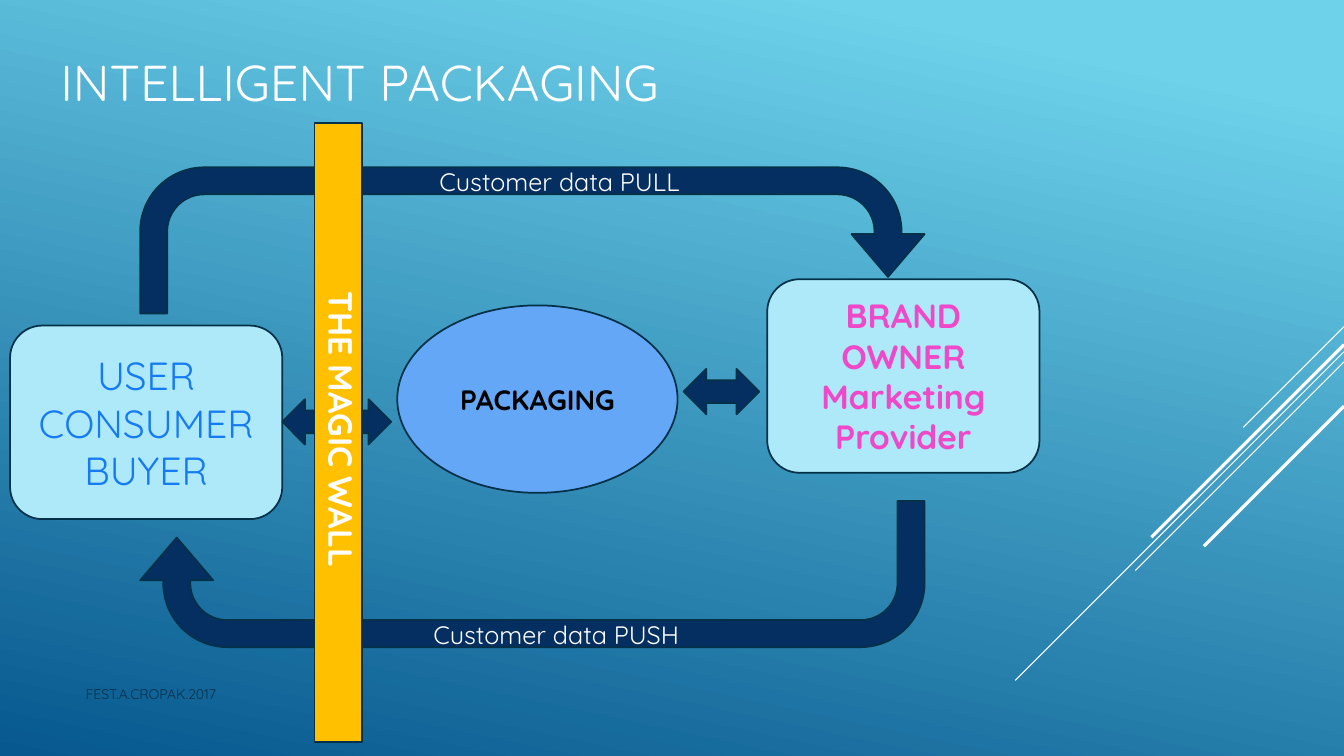
from lxml import etree
from pptx import Presentation
from pptx.dml.color import RGBColor
from pptx.enum.shapes import MSO_CONNECTOR, MSO_SHAPE
from pptx.enum.text import MSO_ANCHOR, MSO_AUTO_SIZE, PP_ALIGN
from pptx.oxml.ns import qn
from pptx.util import Inches, Pt

STRAIGHT = MSO_CONNECTOR.STRAIGHT
RECTANGLE, ROUNDED, OVAL = MSO_SHAPE.RECTANGLE, MSO_SHAPE.ROUNDED_RECTANGLE, MSO_SHAPE.OVAL
U_TURN, DOUBLE_ARROW = MSO_SHAPE.U_TURN_ARROW, MSO_SHAPE.LEFT_RIGHT_ARROW
TOP, MIDDLE = MSO_ANCHOR.TOP, MSO_ANCHOR.MIDDLE
GROW, CENTER = MSO_AUTO_SIZE.SHAPE_TO_FIT_TEXT, PP_ALIGN.CENTER

WHITE, NAVY, OUTLINE, PALE = "FFFFFF", "052F61", "043148", "ADE9F8"


def color(hex_string):
    return RGBColor.from_string(hex_string)


def write(shape, lines, font_color, size, bold=False, align=None):
    """Fill a shape with one paragraph per line."""
    frame = shape.text_frame
    for index, line in enumerate(lines):
        para = frame.paragraphs[0] if index == 0 else frame.add_paragraph()
        para.alignment = align
        span = para.add_run()
        span.text = line
        font_format = {"name": "Quicksand", "size": Pt(size), "bold": bold}
        for name, value in font_format.items():
            setattr(span.font, name, value)
        span.font.color.rgb = color(font_color)


deck = Presentation()
deck.slide_width, deck.slide_height = Inches(13.33), Inches(7.5)
page = deck.slides.add_slide(deck.slide_layouts[6])

# Background gradient
background = page.background.fill
background.gradient()
background.gradient_angle = 258
for stop, (position, shade) in zip(background.gradient_stops, [(0.1, "6ED2EB"), (1, "06588E")]):
    stop.position = position
    stop.color.rgb = color(shade)

# Diagonal lines running in from the right edge at 45 degrees: top, length, weight
for top, reach, weight in [(3.24, 1, 0.75), (3.49, 3.26, 0.75), (3.59, 2.07, 0.75),
                           (3.42, 1.91, 2.25), (4.03, 1.39, 2.25)]:
    line = page.shapes.add_connector(STRAIGHT, Inches(13.33), Inches(top),
                                     Inches(13.33 - reach), Inches(top + reach))
    line.line.color.rgb = color(WHITE)
    line.line.width = Pt(weight)
    etree.SubElement(line._element.spPr, qn("a:effectLst"))

# Diagram shapes, back to front: kind, place, fill, rotation, text arguments
shapes = [
    (U_TURN, (1.39, 1.66, 7.78, 1.45), NAVY, 0, None),
    (U_TURN, (1.39, 4.97, 7.78, 1.45), NAVY, 180, None),
    (ROUNDED, (0.1, 3.23, 2.7, 1.92), PALE, 0,
     (["USER", "CONSUMER", "BUYER"], "167BF3", 28)),
    (ROUNDED, (7.61, 2.77, 2.7, 1.92), PALE, 0,
     (["BRAND OWNER", "Marketing Provider"], "EF48C9", 24, True)),
    (OVAL, (3.94, 3.03, 2.78, 1.86), "64A7F7", 0, (["PACKAGING"], "000000", 20, True)),
    (DOUBLE_ARROW, (2.8, 3.96, 1.08, 0.45), NAVY, 0, None),
    (DOUBLE_ARROW, (6.78, 3.66, 0.75, 0.45), NAVY, 0, None),
    (RECTANGLE, (3.12, 1.22, 0.47, 6.14), "FFC000", 0, None),
]
for kind, place, fill, rotation, text in shapes:
    shape = page.shapes.add_shape(kind, *map(Inches, place))
    shape.shadow.inherit = False
    shape.rotation = rotation
    shape.fill.solid()
    shape.fill.fore_color.rgb = color(fill)
    shape.line.color.rgb = color(OUTLINE)
    shape.line.width = Pt(1.25)
    if kind == U_TURN:
        for index, value in enumerate([0.185, 0.25, 0.293, 0.438, 0.75]):
            shape.adjustments[index] = value
    if text:
        shape.text_frame.word_wrap = True
        shape.text_frame.vertical_anchor = MIDDLE
        write(shape, *text, align=CENTER)

# Title, labels and footer: place, rotation, anchor, wrap, text arguments
labels = [
    ((0.5, 0.23, 12.32, 1.15), 0, MIDDLE, True, (["INTELLIGENT PACKAGING"], WHITE, 36)),
    ((1.9, 4.03, 2.98, 0.5), 90, TOP, False, (["THE MAGIC WALL"], WHITE, 24, True)),
    ((4.26, 1.6, 2.68, 0.4), 0, TOP, False, (["Customer data PULL"], WHITE, 18)),
    ((4.2, 6.09, 2.74, 0.4), 0, TOP, False, (["Customer data PUSH"], WHITE, 18)),
    ((0.75, 6.75, 8.25, 0.4), 0, TOP, True, (["FEST.A.CROPAK.2017"], "0A304A", 10)),
]
for place, rotation, anchor, wrap, text in labels:
    box = page.shapes.add_textbox(*map(Inches, place))
    box.rotation = rotation
    box.text_frame.vertical_anchor = anchor
    box.text_frame.word_wrap = wrap
    if not wrap:
        box.text_frame.auto_size = GROW
    write(box, *text)

deck.save("out.pptx")
